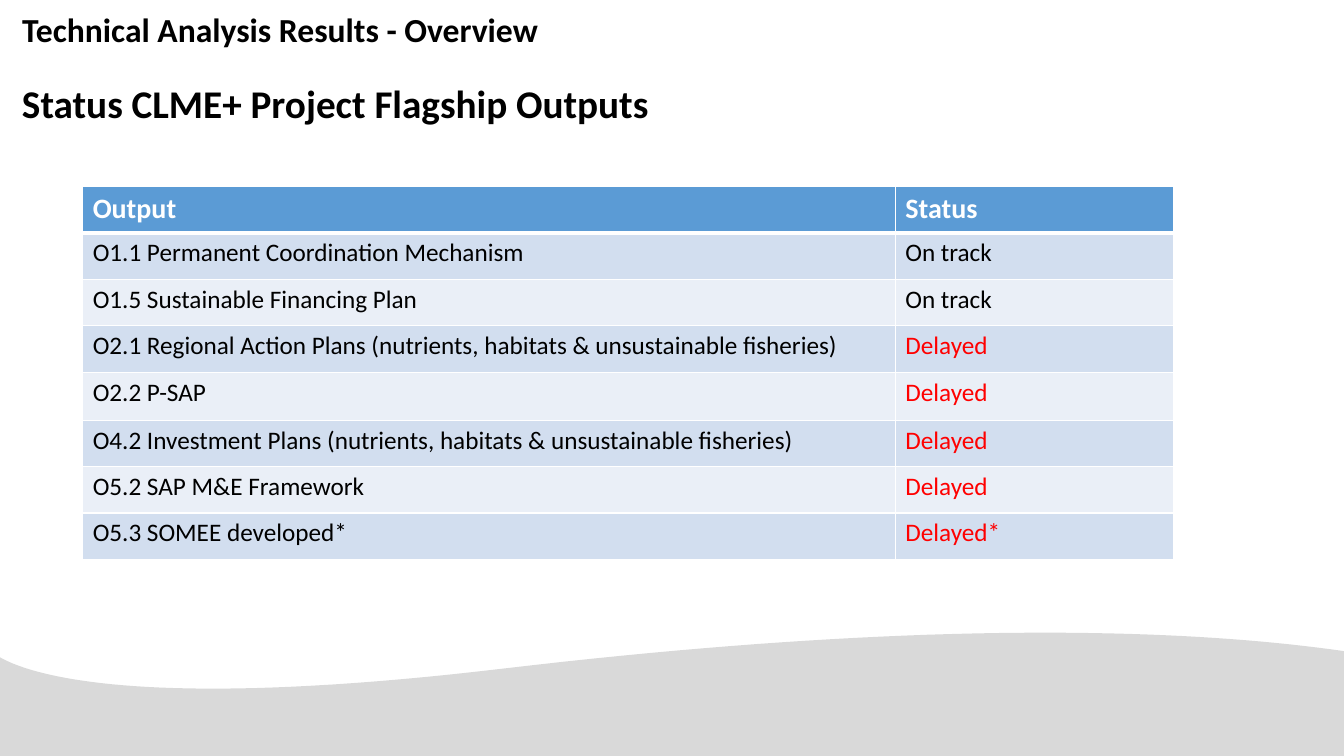
from dataclasses import dataclass

from lxml import etree
from pptx import Presentation
from pptx import util as u
from pptx.dml.color import RGBColor
from pptx.enum import text
from pptx.oxml import ns


@dataclass(frozen=True)
class Theme:
    font: str = "Calibri"
    ink: str = "000000"
    white: str = "FFFFFF"
    late: str = "FF0000"
    head: str = "5B9BD5"
    bands: tuple = ("D2DEEF", "EAEFF7")
    wave: str = "D9D9D9"
    title: int = 24
    sub: int = 28
    label: int = 20
    body: int = 18


THEME = Theme()

ROWS = [
    ("Output", "Status"),
    ("O1.1 Permanent Coordination Mechanism", "On track"),
    ("O1.5 Sustainable Financing Plan", "On track"),
    ("O2.1 Regional Action Plans (nutrients, habitats & unsustainable fisheries)", "Delayed"),
    ("O2.2 P-SAP", "Delayed"),
    ("O4.2 Investment Plans (nutrients, habitats & unsustainable fisheries)", "Delayed"),
    ("O5.2 SAP M&E Framework", "Delayed"),
    ("O5.3 SOMEE developed*", "Delayed*"),
]
WIDTHS = (8.06, 2.76)
HEIGHTS = (0.46, 0.46, 0.46, 0.47, 0.47, 0.46, 0.46, 0.46)

# Wave crest from right to left: each curve is two handles and an end point
CREST = (13.33, 6.46)
CURVES = [
    ((11.65, 6.22), (9.02, 6.16), (5.02, 6.63)),
    ((1.33, 7.07), (0.26, 6.68), (-0.02, 6.51)),
]
STEPS = 40


def style(para, size, color, bold=False):
    font = para.font
    font.name = THEME.font
    font.size = u.Pt(size)
    font.bold = bold
    font.color.rgb = RGBColor.from_string(color)
    para.alignment = text.PP_ALIGN.LEFT


def bezier(start, curve, t):
    weights = ((1 - t) ** 3, 3 * t * (1 - t) ** 2, 3 * t * t * (1 - t), t ** 3)
    points = (start, *curve)
    return tuple(sum(w * p[axis] for w, p in zip(weights, points)) for axis in (0, 1))


def add_wave(slide):
    points, start = [], CREST
    for curve in CURVES:
        points += [bezier(start, curve, i / STEPS) for i in range(1, STEPS + 1)]
        start = curve[-1]
    points += [(start[0], 7.5), (CREST[0], 7.5)]
    build = slide.shapes.build_freeform(u.Inches(CREST[0]), u.Inches(CREST[1]))
    build.add_line_segments([(u.Inches(x), u.Inches(y)) for x, y in points])
    wave = build.convert_to_shape()
    wave.shadow.inherit = False
    wave.fill.solid()
    wave.fill.fore_color.rgb = RGBColor.from_string(THEME.wave)
    wave.line.fill.background()


def set_line(shape, words, box, size):
    shape.left, shape.top, shape.width, shape.height = map(u.Inches, box)
    frame = shape.text_frame
    frame.text = words
    frame.word_wrap = True
    frame.auto_size = text.MSO_AUTO_SIZE.NONE
    frame.vertical_anchor = text.MSO_ANCHOR.TOP
    style(frame.paragraphs[0], size, THEME.ink, True)


def set_edge(cell, side, width):
    props = cell._tc.get_or_add_tcPr()
    line = etree.SubElement(props, ns.qn(f"a:ln{side}"), w=str(u.Pt(width)))
    fill = etree.SubElement(line, ns.qn("a:solidFill"))
    etree.SubElement(fill, ns.qn("a:srgbClr"), val=THEME.white)


def set_cell(cell, words, row):
    head = row == 0
    # Borders come before the fill in the cell's XML
    for side in "LRTB":
        thick = (head and side == "B") or (row == 1 and side == "T")
        set_edge(cell, side, 3 if thick else 1)
    cell.fill.solid()
    shade = THEME.head if head else THEME.bands[(row - 1) % 2]
    cell.fill.fore_color.rgb = RGBColor.from_string(shade)
    cell.text = words
    color = THEME.late if words.startswith("Delayed") else THEME.ink
    style(cell.text_frame.paragraphs[0], THEME.label if head else THEME.body,
          THEME.white if head else color, head)


def add_grid(slide):
    box = map(u.Inches, (0.82, 1.85, sum(WIDTHS), sum(HEIGHTS)))
    table = slide.shapes.add_table(len(ROWS), len(WIDTHS), *box).table
    for col, width in zip(table.columns, WIDTHS):
        col.width = u.Inches(width)
    for row, height in zip(table.rows, HEIGHTS):
        row.height = u.Inches(height)
    for r, row in enumerate(ROWS):
        for c, words in enumerate(row):
            set_cell(table.cell(r, c), words, r)


def main():
    deck = Presentation()
    deck.slide_width, deck.slide_height = u.Inches(13.33), u.Inches(7.5)
    slide = deck.slides.add_slide(deck.slide_layouts[5])

    # Backdrop
    add_wave(slide)

    # Output status table
    add_grid(slide)

    # Headings
    sub = slide.shapes.add_textbox(0, 0, 0, 0)
    set_line(sub, "Status CLME+ Project Flagship Outputs", (0.12, 0.74, 6.63, 0.57), THEME.sub)
    set_line(slide.shapes.title, "Technical Analysis Results - Overview",
             (0.12, 0.04, 6.73, 0.5), THEME.title)

    deck.save("out.pptx")


if __name__ == "__main__":
    main()
